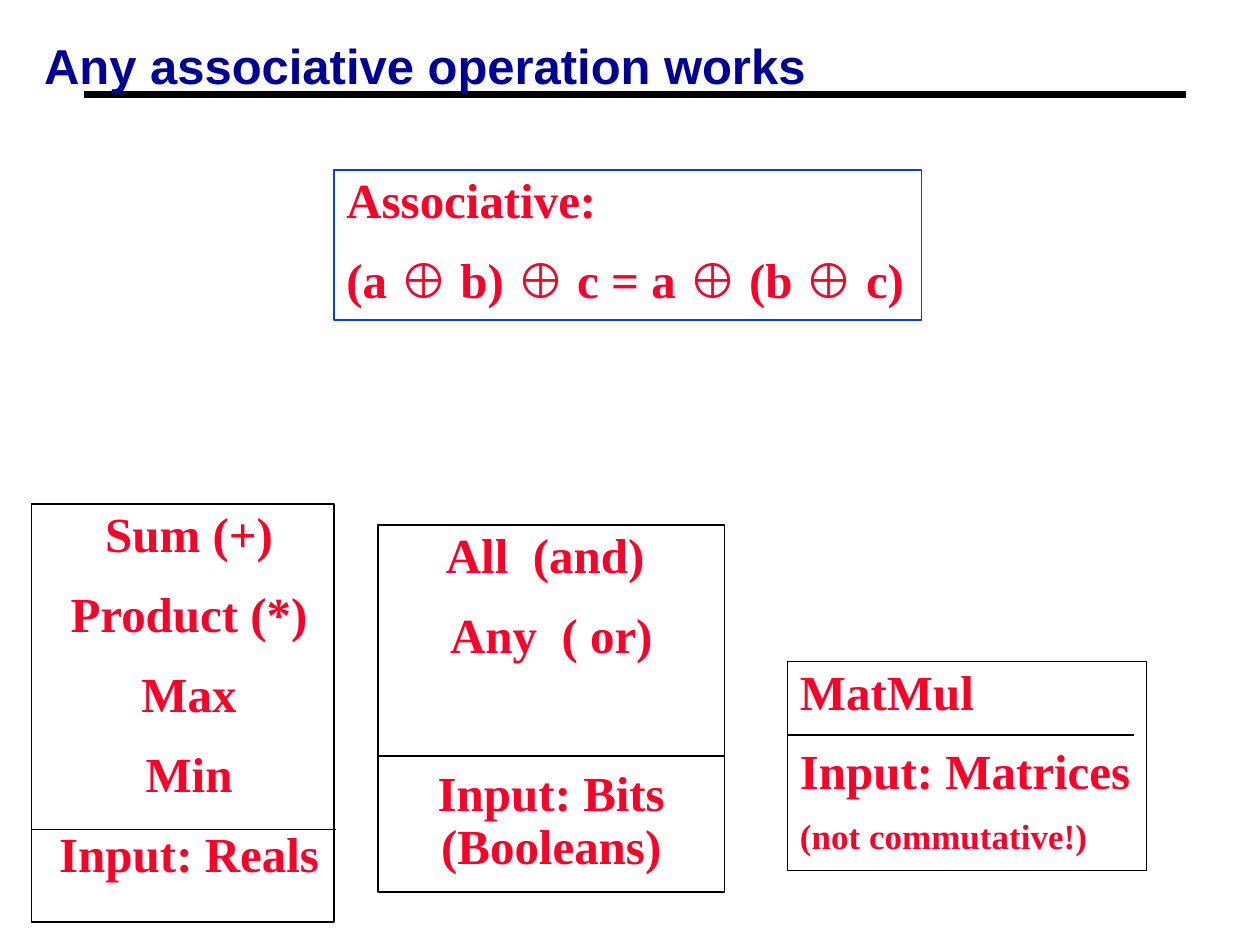
from lxml import etree
from pptx import Presentation, util as u
from pptx.dml.color import RGBColor
from pptx.enum import shapes, text
from pptx.oxml.ns import qn

COLUMNS, ROWS = 120, 90
CENTER, LEFT = text.PP_ALIGN.CENTER, text.PP_ALIGN.LEFT


def rgb(value):
    return RGBColor.from_string(value)


class Board:
    """Places styled elements on a grid of 120 columns by 90 rows."""

    INK, ACCENT, HEADING, BLUE = "000000", "FC0128", "000099", "063DE8"
    BODY_FONT, TITLE_FONT, SIZE = "Times New Roman", "Arial", 28
    GAP = 0.55  # space before a paragraph, as a share of its text size

    def __init__(self):
        self.deck = Presentation()
        self.deck.slide_width, self.deck.slide_height = u.Inches(10), u.Inches(7.5)
        self.column = self.deck.slide_width / COLUMNS
        self.row = self.deck.slide_height / ROWS
        self.slide = self.deck.slides.add_slide(self.deck.slide_layouts[5])

    def grid(self, x, y, *size):
        """Turns column and row pairs into slide lengths."""
        scales = (self.column, self.row) * 2
        return [round(n * scale) for n, scale in zip((x, y, *size), scales)]

    def format_run(self, run, font, color, size):
        for name, value in {"name": font, "size": u.Pt(size), "bold": True}.items():
            setattr(run.font, name, value)
        run.font.color.rgb = rgb(color)

    def format_frame(self, frame, anchor, right=0.1):
        settings = {"word_wrap": True, "auto_size": text.MSO_AUTO_SIZE.NONE,
                    "vertical_anchor": anchor,
                    "margin_left": u.Inches(0.1), "margin_right": u.Inches(right),
                    "margin_top": u.Inches(0.05), "margin_bottom": u.Inches(0.05)}
        for name, value in settings.items():
            setattr(frame, name, value)

    def title(self, wording, area):
        heading = self.slide.shapes.title
        for name, value in zip(("left", "top", "width", "height"), self.grid(*area)):
            setattr(heading, name, value)
        self.format_frame(heading.text_frame, text.MSO_ANCHOR.MIDDLE)
        paragraph = heading.text_frame.paragraphs[0]
        paragraph.alignment = LEFT
        run = paragraph.add_run()
        run.text = wording
        self.format_run(run, self.TITLE_FONT, self.HEADING, self.SIZE)

    def rule(self, x, y, end, weight):
        """Draws a horizontal line."""
        line = self.slide.shapes.add_connector(
            shapes.MSO_CONNECTOR.STRAIGHT, *self.grid(x, y), *self.grid(end, y))
        line.line.color.rgb = rgb(self.INK)
        line.line.width = u.Pt(weight)
        etree.SubElement(line.element.spPr, qn("a:effectLst"))
        return line

    def box(self, area, color, weight):
        frame = self.slide.shapes.add_shape(
            shapes.MSO_SHAPE.RECTANGLE, *self.grid(*area))
        frame.shadow.inherit = False
        frame.fill.background()
        frame.line.color.rgb = rgb(color)
        frame.line.width = u.Pt(weight)
        return frame

    def label(self, area):
        return self.slide.shapes.add_textbox(*self.grid(*area))

    def set_lines(self, holder, lines, align, right=0.1):
        """Fills a shape; each line is wording, or wording with size and gap."""
        frame = holder.text_frame
        self.format_frame(frame, text.MSO_ANCHOR.TOP, right)
        for index, line in enumerate(lines):
            wording, size, gap = (line if isinstance(line, tuple)
                                  else (line, self.SIZE, self.GAP))
            paragraph = frame.add_paragraph() if index else frame.paragraphs[0]
            paragraph.alignment = align
            paragraph.line_spacing = 0.9
            paragraph.space_before = u.Pt(size * gap if index else 0)
            run = paragraph.add_run()
            run.text = wording
            self.format_run(run, self.BODY_FONT, self.ACCENT, size)


def main():
    board = Board()
    board.title("Any associative operation works", (3, 2, 114, 8.3))
    underline = board.rule(8, 9, 113, 3.75)
    board.slide.shapes.title.element.addprevious(underline.element)

    bits = board.box((36, 50, 33, 35), board.INK, 1)
    board.set_lines(bits, ["All  (and) ", "Any  ( or)",
                           ("Input: Bits (Booleans)", board.SIZE, 2.14)], CENTER)

    board.box((3, 48, 28.8, 39.84), board.INK, 1)
    board.rule(3, 79, 32, 1)
    reals = board.label((4, 48, 28, 45.84))
    board.set_lines(reals, ["Sum (+)", "Product (*)", "Max", "Min", "Input: Reals"],
                    CENTER)

    law = board.box((31.8, 16.2, 56, 14.28), board.BLUE, 0.75)
    board.set_lines(law, ["Associative:", "(a ⊕ b) ⊕ c = a ⊕ (b ⊕ c)"], LEFT, right=0)

    matrices = board.box((75, 63, 34.2, 19.92), board.INK, 0.75)
    board.set_lines(matrices, ["MatMul", "Input: Matrices",
                               ("(not commutative!)", 20, board.GAP)], LEFT, right=0)

    board.rule(36, 72, 69, 0.75)
    board.rule(75, 70, 108, 0.75)
    board.deck.save("out.pptx")


if __name__ == "__main__":
    main()
